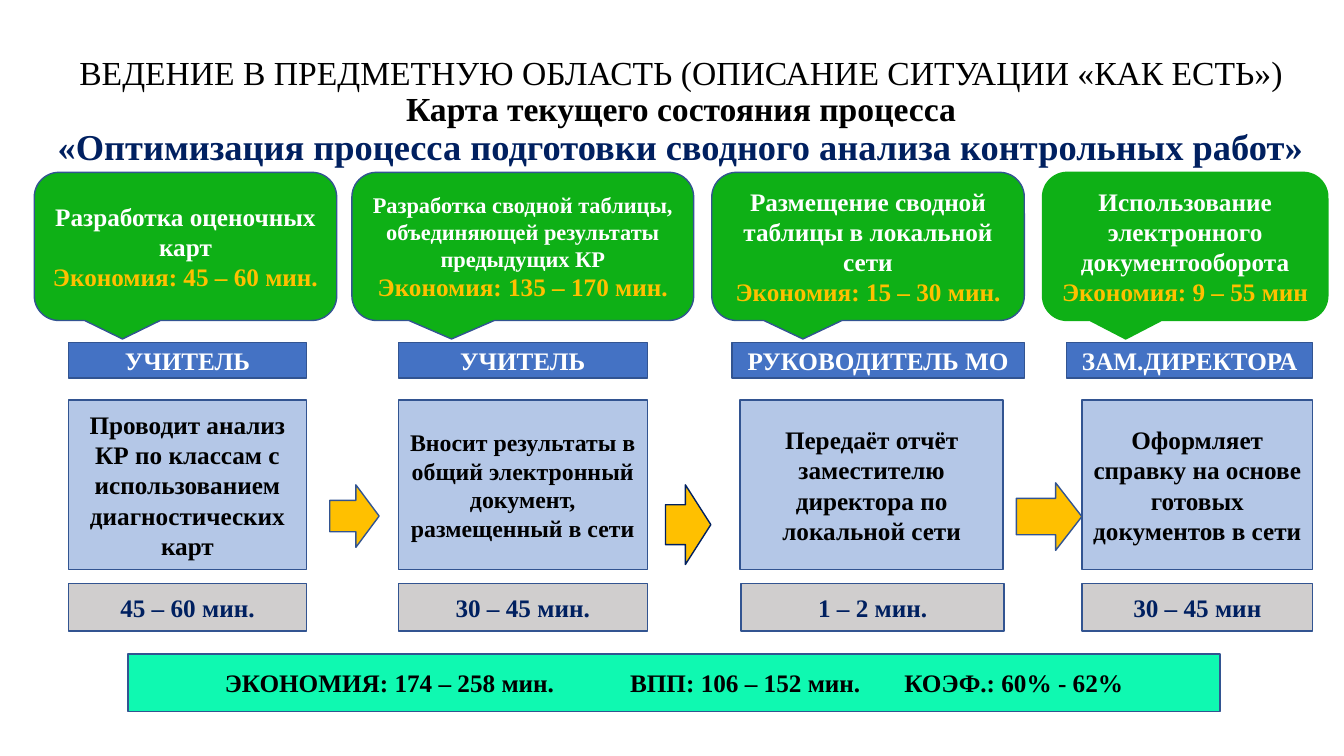
from copy import deepcopy

from lxml.etree import SubElement
from pptx import Presentation
from pptx.dml.color import RGBColor
from pptx.enum.shapes import MSO_SHAPE as Shape
from pptx.enum.text import MSO_ANCHOR as Anchor, MSO_AUTO_SIZE as AutoSize, PP_ALIGN as Align
from pptx.oxml.ns import qn
from pptx.util import Inches, Pt

FONT = "Times New Roman"
BLACK = RGBColor(0x00, 0x00, 0x00)
WHITE = RGBColor(0xFF, 0xFF, 0xFF)
NAVY = RGBColor(0x00, 0x20, 0x60)
GOLD = RGBColor(0xFF, 0xC0, 0x00)
GREEN = RGBColor(0x0E, 0xB0, 0x16)
BLUE = RGBColor(0x44, 0x72, 0xC4)
PALE_BLUE = RGBColor(0xB4, 0xC7, 0xE7)
GRAY = RGBColor(0xD0, 0xCE, 0xCE)
MINT = RGBColor(0x0F, 0xF9, 0xB1)
OUTLINE = RGBColor(0x32, 0x54, 0x91)

# text, size, bold, colour
TITLE = [
    ("ВЕДЕНИЕ В ПРЕДМЕТНУЮ ОБЛАСТЬ (ОПИСАНИЕ СИТУАЦИИ «КАК ЕСТЬ»)", 24, False, BLACK),
    ("Карта текущего состояния процесса", 24, True, BLACK),
    ("«Оптимизация процесса подготовки сводного анализа контрольных работ»", 26, True, NAVY),
]

# rows of the map: top, height, preset shape, fill
ROWS = {
    "improvement": (1.71, 1.47, Shape.ROUNDED_RECTANGULAR_CALLOUT, GREEN),
    "role": (3.4, 0.35, Shape.RECTANGLE, BLUE),
    "action": (3.97, 1.68, Shape.RECTANGLE, PALE_BLUE),
    "duration": (5.79, 0.47, Shape.RECTANGLE, GRAY),
}

# per step, for each row: left, width, lines of (text, size, colour)
STEPS = [
    {
        "improvement": (0.34, 3, [("Разработка оценочных карт", 18, WHITE),
                                  ("Экономия: 45 – 60 мин.", 18, GOLD)]),
        "role": (0.68, 2.36, [("УЧИТЕЛЬ", 18, WHITE)]),
        "action": (0.68, 2.36, [("Проводит анализ КР по классам с использованием "
                                 "диагностических карт", 18, BLACK)]),
        "duration": (0.68, 2.36, [("45 – 60 мин.", 18, NAVY)]),
    },
    {
        "improvement": (3.49, 3.39, [("Разработка сводной таблицы, объединяющей результаты "
                                      "предыдущих КР", 16, WHITE),
                                     ("Экономия: 135 – 170 мин.", 18, GOLD)]),
        "role": (3.95, 2.47, [("УЧИТЕЛЬ", 18, WHITE)]),
        "action": (3.95, 2.47, [("Вносит результаты в общий электронный документ, "
                                 "размещенный в сети", 17, BLACK)]),
        "duration": (3.95, 2.47, [("30 – 45 мин.", 18, NAVY)]),
    },
    {
        "improvement": (7.06, 3.1, [("Размещение сводной таблицы в локальной сети", 18, WHITE),
                                    ("Экономия: 15 – 30 мин.", 18, GOLD)]),
        "role": (7.26, 2.9, [("РУКОВОДИТЕЛЬ МО", 18, WHITE)]),
        "action": (7.34, 2.61, [("Передаёт отчёт заместителю директора по "
                                 "локальной сети", 18, BLACK)]),
        "duration": (7.35, 2.61, [("1 – 2 мин.", 18, NAVY)]),
    },
    {
        "improvement": (10.34, 2.83, [("Использование электронного документооборота", 18, WHITE),
                                      ("Экономия: 9 – 55 мин", 18, GOLD)]),
        "role": (10.58, 2.44, [("ЗАМ.ДИРЕКТОРА", 18, WHITE)]),
        "action": (10.73, 2.29, [("Оформляет справку на основе готовых документов "
                                  "в сети", 18, BLACK)]),
        "duration": (10.73, 2.29, [("30 – 45 мин", 18, NAVY)]),
    },
]

# box, (shaft, head) adjustments, outline
ARROWS = [
    ((3.27, 4.81, 0.49, 0.62), (0.5, 0.47), OUTLINE),
    ((6.6, 4.81, 0.45, 0.79), (0.5, 0.56), NAVY),
    ((10.08, 4.79, 0.65, 0.67), (0.54, 0.4), OUTLINE),
]

SUMMARY = ["ЭКОНОМИЯ: 174 – 258 мин.", "ВПП: 106 – 152 мин.", "КОЭФ.: 60% - 62%"]
SUMMARY_BOX = (1.27, 6.49, 10.83, 0.57)
SUMMARY_STARTS = (2.23, 6.25, 8.97)


def format_run(run, size, bold, color):
    run.font.name = FONT
    run.font.size = Pt(size)
    run.font.bold = bold
    run.font.color.rgb = color


def add_block(slide, preset, box, fill, outline=OUTLINE, lines=()):
    """Add a filled shape with bold centred lines of (text, size, colour)."""
    shape = slide.shapes.add_shape(preset, *map(Inches, box))
    shape.shadow.inherit = False
    shape.fill.solid()
    shape.fill.fore_color.rgb = fill
    shape.line.color.rgb = outline
    shape.line.width = Pt(1)
    text_frame = shape.text_frame
    text_frame.word_wrap = True
    text_frame.vertical_anchor = Anchor.MIDDLE
    text_frame.text = "\n".join(text for text, _, _ in lines)
    for paragraph, (_, size, color) in zip(text_frame.paragraphs, lines):
        paragraph.alignment = Align.CENTER
        for run in paragraph.runs:
            format_run(run, size, True, color)
    return shape


def add_title(slide):
    title = slide.shapes.title
    title.left, title.top, title.width, title.height = map(Inches, (0.34, 0.4, 12.83, 1.43))
    text_frame = title.text_frame
    text_frame.auto_size = AutoSize.NONE
    text_frame.vertical_anchor = Anchor.MIDDLE
    paragraph = text_frame.paragraphs[0]
    paragraph.text = "\v".join(text for text, *_ in TITLE)
    paragraph.alignment = Align.CENTER
    paragraph.line_spacing = 0.9
    for run, (_, *style) in zip(paragraph.runs, TITLE):
        format_run(run, *style)
    # Line breaks take the size of the run before them
    for line_break in paragraph._p.findall(qn("a:br")):
        line_break.append(deepcopy(line_break.getprevious().find(qn("a:rPr"))))


def add_summary(slide):
    bar = add_block(slide, Shape.RECTANGLE, SUMMARY_BOX, MINT,
                    lines=[("\t".join(SUMMARY), 18, BLACK)])
    first, *others = SUMMARY_STARTS
    bar.text_frame.margin_left = Inches(first - SUMMARY_BOX[0])
    paragraph = bar.text_frame.paragraphs[0]
    paragraph.alignment = Align.LEFT
    tab_list = SubElement(paragraph._p.get_or_add_pPr(), qn("a:tabLst"))
    for start in others:
        SubElement(tab_list, qn("a:tab"), pos=str(Inches(start - first)), algn="l")


def main():
    presentation = Presentation()
    presentation.slide_width = Inches(13.33)
    presentation.slide_height = Inches(7.5)
    slide = presentation.slides.add_slide(presentation.slide_layouts[5])

    add_title(slide)
    for step in STEPS:
        for row, (left, width, lines) in step.items():
            top, height, preset, fill = ROWS[row]
            borderless = row == "improvement" and step is STEPS[-1]
            add_block(slide, preset, (left, top, width, height), fill,
                      fill if borderless else OUTLINE, lines)
    for box, (shaft, head), outline in ARROWS:
        arrow = add_block(slide, Shape.RIGHT_ARROW, box, GOLD, outline)
        arrow.adjustments[0], arrow.adjustments[1] = shaft, head
    add_summary(slide)
    presentation.save("out.pptx")


if __name__ == "__main__":
    main()
